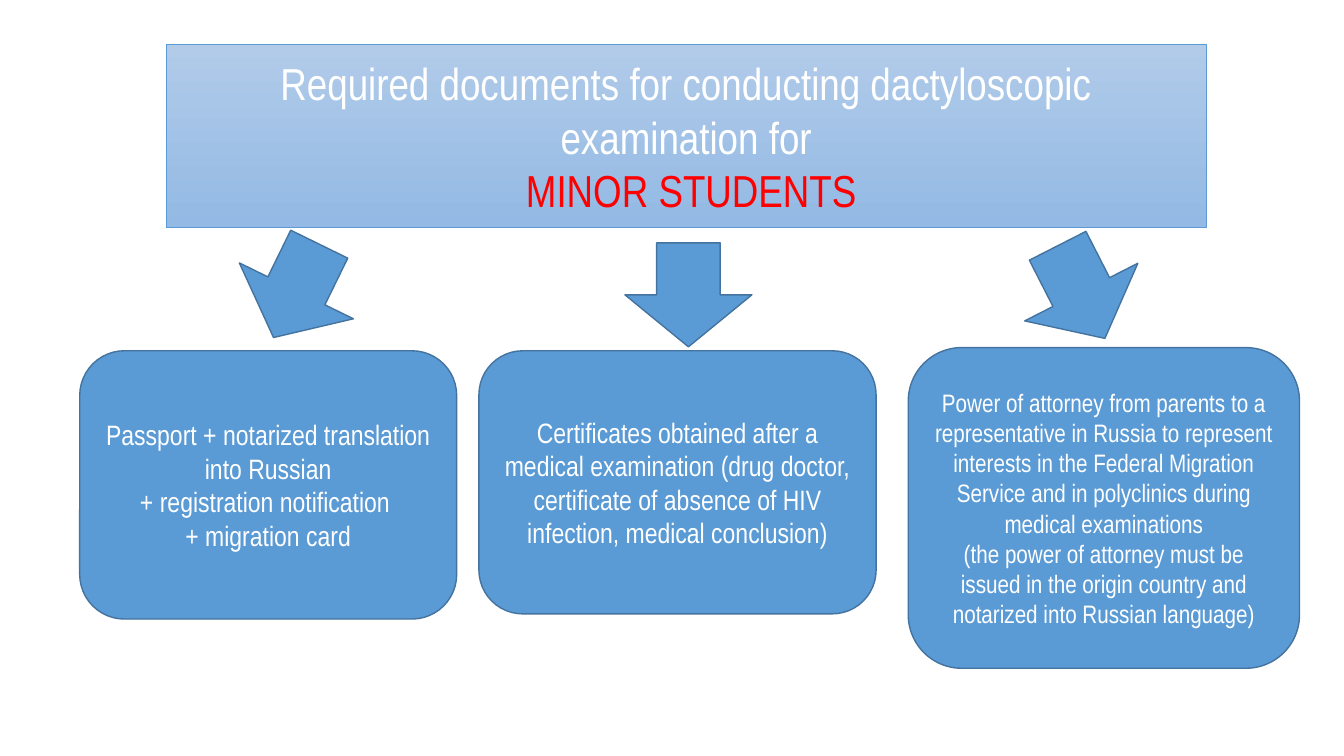
from pptx import Presentation
from pptx import util as u
from pptx.dml import color
from pptx.enum import shapes, text

FONT = "Arial Narrow"
COLORS = {
    "blue": "5B9BD5",
    "outline": "43739E",
    "banner_top": "B1CBE9",
    "banner_bottom": "93B9E4",
    "white": "FFFFFF",
    "red": "FF0000",
}


def rgb(name):
    return color.RGBColor.from_string(COLORS[name])


def write(shape, lines, size, line_colors):
    frame = shape.text_frame
    frame.word_wrap = True
    frame.auto_size = text.MSO_AUTO_SIZE.NONE
    frame.vertical_anchor = text.MSO_ANCHOR.MIDDLE
    frame.text = "\n".join(lines)
    for paragraph, name in zip(frame.paragraphs, line_colors):
        paragraph.alignment = text.PP_ALIGN.CENTER
        paragraph.font.name = FONT
        paragraph.font.size = u.Pt(size)
        paragraph.font.color.rgb = rgb(name)


presentation = Presentation()
presentation.slide_width = u.Cm(33.87)
presentation.slide_height = u.Cm(19.05)
slide = presentation.slides.add_slide(presentation.slide_layouts.get_by_name("Title Only"))

title = slide.shapes.title
title.left, title.top = u.Cm(4.19), u.Cm(1.12)
title.width, title.height = u.Cm(26.21), u.Cm(4.62)
title.fill.gradient()
title.fill.gradient_angle = 270
for stop, name in zip(title.fill.gradient_stops, ("banner_top", "banner_bottom")):
    stop.color.rgb = rgb(name)
title.line.color.rgb = rgb("blue")
title.line.width = u.Pt(0.5)
write(
    title,
    ["Required documents for conducting dactyloscopic examination for", " MINOR STUDENTS"],
    32,
    ["white", "red"],
)

documents = [
    ((2.01, 8.84, 9.5, 6.76), 20, [
        "Passport + notarized translation into Russian",
        "+ registration notification ",
        "+ migration card",
    ]),
    ((12.07, 8.84, 10.01, 6.63), 20, [
        "Certificates obtained after a medical examination (drug doctor, "
        "certificate of absence of HIV infection, medical conclusion)",
    ]),
    ((22.89, 8.76, 9.86, 8.08), 18, [
        "Power of attorney from parents to a representative in Russia to represent "
        "interests in the Federal Migration Service and in polyclinics during "
        "medical examinations",
        "(the power of attorney must be issued in the origin country and "
        "notarized into Russian language)",
    ]),
]
arrows = [(5.87, 6.02, 26.1), (15.75, 6.12, 0), (25.65, 6.05, 333)]

blue_shapes = []
for box, size, lines in documents:
    card = slide.shapes.add_shape(shapes.MSO_SHAPE.ROUNDED_RECTANGLE, *map(u.Cm, box))
    write(card, lines, size, ["white"] * len(lines))
    blue_shapes.append(card)

for left, top, rotation in arrows:
    arrow = slide.shapes.add_shape(
        shapes.MSO_SHAPE.DOWN_ARROW, u.Cm(left), u.Cm(top), u.Cm(3.2), u.Cm(2.62)
    )
    arrow.rotation = rotation
    blue_shapes.append(arrow)

for shape in blue_shapes:
    shape.shadow.inherit = False
    shape.fill.solid()
    shape.fill.fore_color.rgb = rgb("blue")
    shape.line.color.rgb = rgb("outline")
    shape.line.width = u.Pt(1)

presentation.save("out.pptx")
